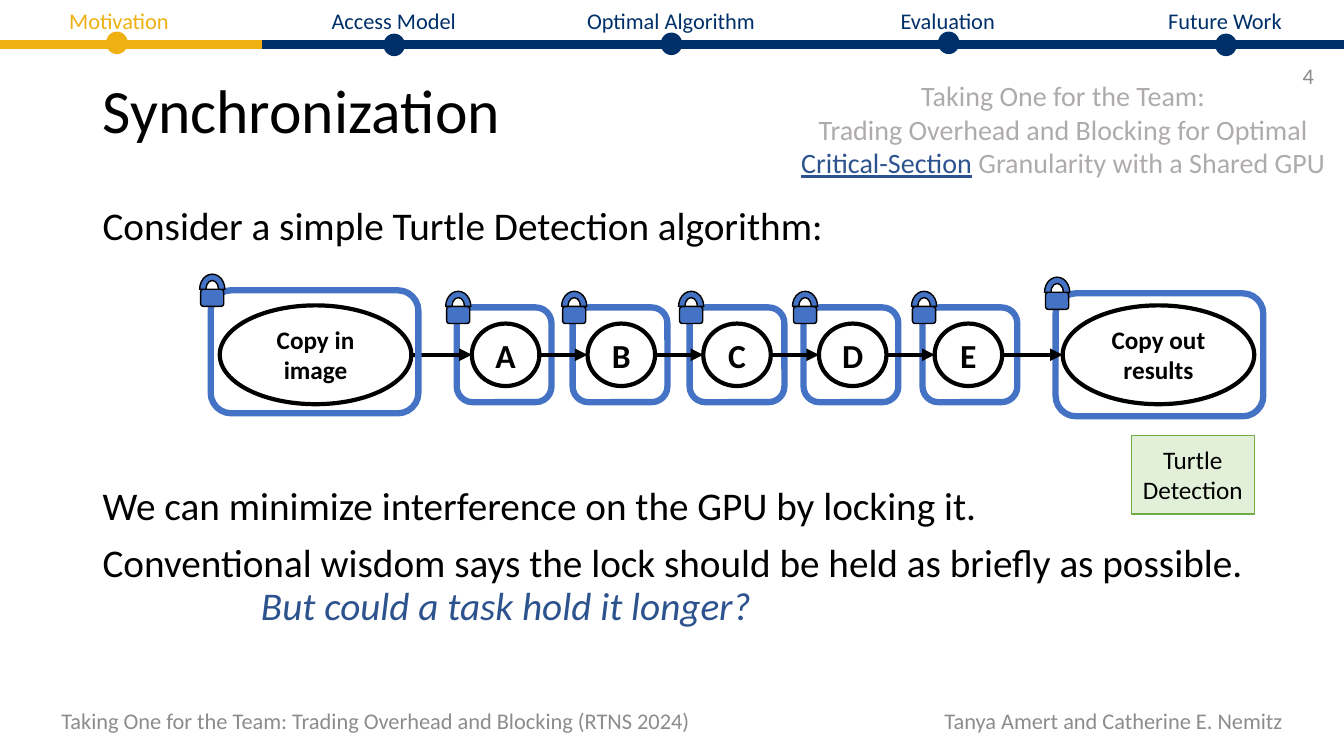
from dataclasses import dataclass

from lxml import etree
from pptx import Presentation
from pptx.dml.color import RGBColor
from pptx.enum import shapes, text
from pptx.oxml import ns
from pptx.util import Inches, Pt

BLACK = RGBColor(0x00, 0x00, 0x00)
BLUE = RGBColor(0x44, 0x72, 0xC4)
DARK_BLUE = RGBColor(0x2D, 0x53, 0x8F)
NAVY = RGBColor(0x00, 0x30, 0x69)
GOLD = RGBColor(0xEE, 0xB1, 0x11)
GRAY = RGBColor(0x8C, 0x8C, 0x8C)
LIGHT_GRAY = RGBColor(0xAF, 0xAB, 0xAB)
GREEN = RGBColor(0x70, 0xAD, 0x47)
PALE_GREEN = RGBColor(0xE2, 0xF0, 0xD9)

LEFT, CENTER, RIGHT = text.PP_ALIGN.LEFT, text.PP_ALIGN.CENTER, text.PP_ALIGN.RIGHT
TOP, MIDDLE = text.MSO_ANCHOR.TOP, text.MSO_ANCHOR.MIDDLE
KIND = shapes.MSO_SHAPE


@dataclass
class Box:
    left: float
    top: float
    width: float
    height: float

    def lengths(self):
        return [Inches(v) for v in (self.left, self.top, self.width, self.height)]


@dataclass
class Stage:
    label: str
    size: int
    ellipse: Box
    frame: Box


@dataclass
class Section:
    label: str
    box: Box
    dot_top: float
    color: RGBColor = NAVY


def format_run(run, size, color, bold=False, italic=False, underline=False):
    font = run.font
    font.name, font.size, font.color.rgb = "Calibri", Pt(size), color
    font.bold, font.italic, font.underline = bold, italic, underline


def write(shape, lines: list[str], size, color, align=CENTER, anchor=MIDDLE,
          wrap=True, bold=False, italic=False):
    frame = shape.text_frame
    frame.text = "\n".join(lines)
    frame.word_wrap, frame.vertical_anchor = wrap, anchor
    for paragraph in frame.paragraphs:
        paragraph.alignment = align
        for run in paragraph.runs:
            format_run(run, size, color, bold, italic)


def add_text(slide, box: Box, lines: list[str], size, color, **options):
    shape = slide.shapes.add_textbox(*box.lengths())
    write(shape, lines, size, color, **options)
    return shape


def add_shape(slide, kind, box: Box, line, width, fill=None):
    shape = slide.shapes.add_shape(kind, *box.lengths())
    shape.shadow.inherit = False
    if fill is None:
        shape.fill.background()
    else:
        shape.fill.solid()
        shape.fill.fore_color.rgb = fill
    shape.line.color.rgb, shape.line.width = line, Pt(width)
    return shape


def add_line(slide, start: float, end: float, y: float, color, width, arrow=False):
    connector = slide.shapes.add_connector(
        shapes.MSO_CONNECTOR.STRAIGHT, Inches(start), Inches(y), Inches(end), Inches(y))
    connector.line.color.rgb, connector.line.width = color, Pt(width)
    if arrow:
        etree.SubElement(connector.line._get_or_add_ln(), ns.qn("a:tailEnd"), type="triangle")
    etree.SubElement(connector._element.spPr, ns.qn("a:effectLst"))


def add_locked_frame(slide, frame: Box):
    add_shape(slide, KIND.ROUNDED_RECTANGLE, frame, BLUE, 4.5)
    left, top = frame.left - 0.11, frame.top - 0.16
    add_shape(slide, KIND.ROUNDED_RECTANGLE, Box(left + 0.01, top + 0.15, 0.23, 0.17), BLACK, 1, BLUE)
    add_shape(slide, KIND.BLOCK_ARC, Box(left, top, 0.25, 0.3), BLACK, 1, BLUE)


def add_pipeline(slide):
    frame_lefts = [4.53, 5.68, 6.84, 7.97, 9.15]
    stages = [Stage("Copy in image", 18, Box(2.18, 3.03, 1.9, 0.98), Box(2.09, 2.88, 2.06, 1.22))]
    for index, (letter, left) in enumerate(zip("ABCDE", frame_lefts)):
        circle = Box(4.68 + 1.1475 * index, 3.21, 0.67, 0.62)
        stages.append(Stage(letter, 24, circle, Box(left, 3.05, 0.94, 0.94)))
    stages.append(
        Stage("Copy out results", 18, Box(10.54, 3.03, 1.9, 0.98), Box(10.47, 2.91, 2.06, 1.22)))

    # The first frame goes on top of the arrow that leaves it
    for stage in stages[1:]:
        add_locked_frame(slide, stage.frame)
    for stage in stages:
        ellipse = add_shape(slide, KIND.OVAL, stage.ellipse, BLACK, 3)
        write(ellipse, [stage.label], stage.size, BLACK, bold=True)
    for source, target in zip(stages, stages[1:]):
        start = source.ellipse.left + source.ellipse.width
        add_line(slide, start, target.ellipse.left, 3.52, BLACK, 3, arrow=True)
    add_locked_frame(slide, stages[0].frame)


def add_progress_bar(slide):
    sections = [
        Section("Motivation", Box(0.44, 0.02, 1.48, 0.37), 0.32, GOLD),
        Section("Access Model", Box(2.86, 0.02, 2.09, 0.37), 0.34),
        Section("Optimal Algorithm", Box(5.59, 0.02, 2.13, 0.37), 0.33),
        Section("Evaluation", Box(8.47, 0.02, 1.86, 0.37), 0.32),
        Section("Future Work", Box(11.41, 0.02, 1.48, 0.37), 0.34),
    ]
    add_line(slide, 0, 13.33, 0.44, NAVY, 6)
    add_line(slide, 0, 2.6, 0.44, GOLD, 6)
    for index, section in enumerate(sections):
        add_text(slide, section.box, [section.label], 16, section.color, anchor=TOP)
        dot = Box(1.06 + 2.75 * index, section.dot_top, 0.2, 0.21)
        add_shape(slide, KIND.OVAL, dot, section.color, 1, section.color)


def add_talk_title(slide):
    lines = ["Taking One for the Team:", "Trading Overhead and Blocking for Optimal"]
    shape = add_text(slide, Box(7.82, 0.66, 5.45, 1.24), lines[:1], 20, LIGHT_GRAY)
    paragraph = shape.text_frame.paragraphs[0]
    pieces = [(lines[1], LIGHT_GRAY, True), ("Critical-Section", DARK_BLUE, True),
              (" Granularity with a Shared GPU", LIGHT_GRAY, False)]
    for words, color, new_line in pieces:
        if new_line:
            paragraph.add_line_break()
        run = paragraph.add_run()
        run.text = words
        format_run(run, 20, color, underline=color == DARK_BLUE)


def main():
    presentation = Presentation()
    presentation.slide_width, presentation.slide_height = Inches(13.33), Inches(7.5)
    slide = presentation.slides.add_slide(presentation.slide_layouts[5])

    # Title
    title = slide.shapes.title
    title.left, title.top, title.width, title.height = Box(0.92, 0.4, 11.5, 1.45).lengths()
    write(title, ["Synchronization"], 44, BLACK, align=LEFT)
    title.text_frame.paragraphs[0].line_spacing = 0.9

    # Footer and slide number
    add_text(slide, Box(9.03, 6.95, 3.79, 0.4), ["Tanya Amert and Catherine E. Nemitz"],
             16, GRAY, align=RIGHT)
    add_text(slide, Box(0.51, 6.95, 6.6, 0.4),
             ["Taking One for the Team: Trading Overhead and Blocking (RTNS 2024)"],
             16, GRAY, align=LEFT)
    add_text(slide, Box(10.13, 0.55, 3, 0.4), ["4"], 16, GRAY, align=RIGHT)

    # Body, with room for the pipeline after the first paragraph
    body = add_text(slide, Box(0.92, 2, 11.5, 4.76), [
        "Consider a simple Turtle Detection algorithm:",
        "We can minimize interference on the GPU by locking it.",
        "Conventional wisdom says the lock should be held as briefly as possible.",
    ], 28, BLACK, align=LEFT, anchor=TOP)
    for paragraph, space in zip(body.text_frame.paragraphs, (0, 170, 10)):
        paragraph.line_spacing, paragraph.space_before = 0.9, Pt(space)
    add_text(slide, Box(2.49, 5.72, 5.13, 0.57), ["But could a task hold it longer?"],
             28, DARK_BLUE, align=LEFT, anchor=TOP, wrap=False, italic=True)

    # Diagram
    add_pipeline(slide)
    tag = add_shape(slide, KIND.RECTANGLE, Box(11.22, 4.32, 1.22, 0.78), GREEN, 1, PALE_GREEN)
    write(tag, ["Turtle Detection"], 18, BLACK)

    # Header
    add_talk_title(slide)
    add_progress_bar(slide)
    presentation.save("out.pptx")


if __name__ == "__main__":
    main()
